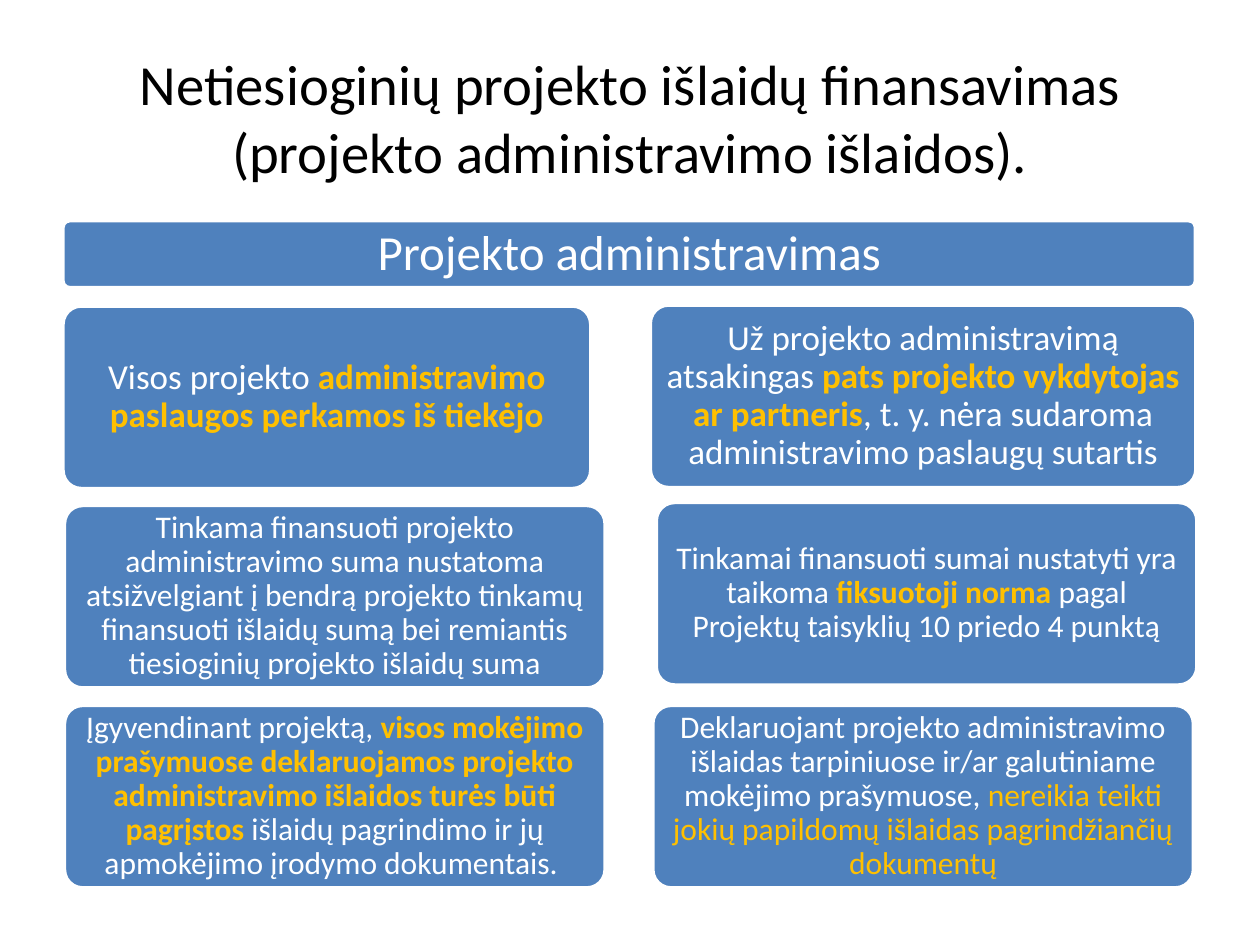
from pptx import Presentation
from pptx.dml.color import RGBColor
from pptx.enum.shapes import MSO_SHAPE
from pptx.enum.text import MSO_ANCHOR, PP_ALIGN
from pptx.util import Cm, Pt

ROUND = MSO_SHAPE.ROUNDED_RECTANGLE
MIDDLE = MSO_ANCHOR.MIDDLE
CENTER = PP_ALIGN.CENTER
BLUE = RGBColor(0x4F, 0x81, 0xBD)
GOLD = RGBColor(0xFF, 0xC0, 0x00)
WHITE = RGBColor(0xFF, 0xFF, 0xFF)
BLACK = RGBColor(0x00, 0x00, 0x00)
PLAIN, BOLD, TINT = (WHITE, False), (GOLD, True), (GOLD, False)
HIGH = 3.68

# Each box: left, top, width, text size, runs
BOXES = [
    (1.27, 6.17, 10.64, 20, [
        ("Visos projekto ", PLAIN),
        ("administravimo paslaugos perkamos iš tiekėjo", BOLD)]),
    (1.3, 10.19, 10.9, 18, [
        ("Tinkama finansuoti projekto administravimo suma nustatoma "
         "atsižvelgiant į bendrą projekto tinkamų finansuoti išlaidų sumą "
         "bei remiantis tiesioginių projekto išlaidų suma", PLAIN)]),
    (1.3, 14.22, 10.9, 18, [
        ("Įgyvendinant projektą, ", PLAIN),
        ("visos mokėjimo prašymuose deklaruojamos projekto administravimo "
         "išlaidos turės būti pagrįstos", BOLD),
        (" išlaidų pagrindimo ir jų apmokėjimo įrodymo dokumentais. ", PLAIN)]),
    (13.11, 6.15, 11, 20, [
        ("Už projekto administravimą atsakingas ", PLAIN),
        ("pats projekto vykdytojas ar partneris", BOLD),
        (", t. y. nėra sudaroma administravimo paslaugų sutartis", PLAIN)]),
    (13.23, 10.13, 10.9, 18, [
        ("Tinkamai finansuoti sumai nustatyti yra taikoma ", PLAIN),
        ("fiksuotoji norma ", BOLD),
        ("pagal Projektų taisyklių 10 priedo 4 punktą", PLAIN)]),
    (13.16, 14.22, 10.9, 18, [
        ("Deklaruojant projekto administravimo išlaidas tarpiniuose ir/ar "
         "galutiniame mokėjimo prašymuose, ", PLAIN),
        ("nereikia teikti jokių papildomų išlaidas pagrindžiančių "
         "dokumentų", TINT)]),
]


class Deck:
    face = "Calibri"

    def __init__(self, slide):
        self.slide = slide

    def style(self, run, size, color, bold=False):
        font = run.font
        font.name, font.size, font.bold = self.face, Pt(size), bold
        font.color.rgb = color

    def title(self, text, left, top, width, height, size):
        shape = self.slide.shapes.title
        shape.left, shape.top = Cm(left), Cm(top)
        shape.width, shape.height = Cm(width), Cm(height)
        frame = shape.text_frame
        frame.text = text
        frame.vertical_anchor = MIDDLE
        para = frame.paragraphs[0]
        para.alignment = CENTER
        self.style(para.runs[0], size, BLACK)

    def box(self, left, top, width, height, size, runs, inset):
        shape = self.slide.shapes.add_shape(
            ROUND, Cm(left), Cm(top), Cm(width), Cm(height))
        shape.adjustments[0] = 0.1
        shape.shadow.inherit = False
        shape.fill.solid()
        shape.fill.fore_color.rgb = BLUE
        shape.line.color.rgb = WHITE
        shape.line.width = Pt(2)
        frame = shape.text_frame
        frame.word_wrap = True
        frame.vertical_anchor = MIDDLE
        frame.margin_left = frame.margin_right = Cm(inset)
        frame.margin_top = frame.margin_bottom = Cm(inset)
        para = frame.paragraphs[0]
        para.alignment = CENTER
        para.line_spacing = 0.9
        for text, (color, bold) in runs:
            run = para.add_run()
            run.text = text
            self.style(run, size, color, bold)


def main():
    show = Presentation()
    show.slide_width, show.slide_height = Cm(25.4), Cm(19.05)
    deck = Deck(show.slides.add_slide(show.slide_layouts[5]))

    # Title and banner
    deck.title("Netiesioginių projekto išlaidų finansavimas "
               "(projekto administravimo išlaidos).",
               1.27, 0.76, 22.86, 3.18, 32.4)
    deck.box(1.27, 4.45, 22.83, 1.35, 28,
             [("Projekto administravimas", PLAIN)], 0.3)

    # Two columns of boxes
    for left, top, width, size, runs in BOXES:
        deck.box(left, top, width, HIGH, size, runs, size / 100)

    show.save("out.pptx")


if __name__ == "__main__":
    main()
